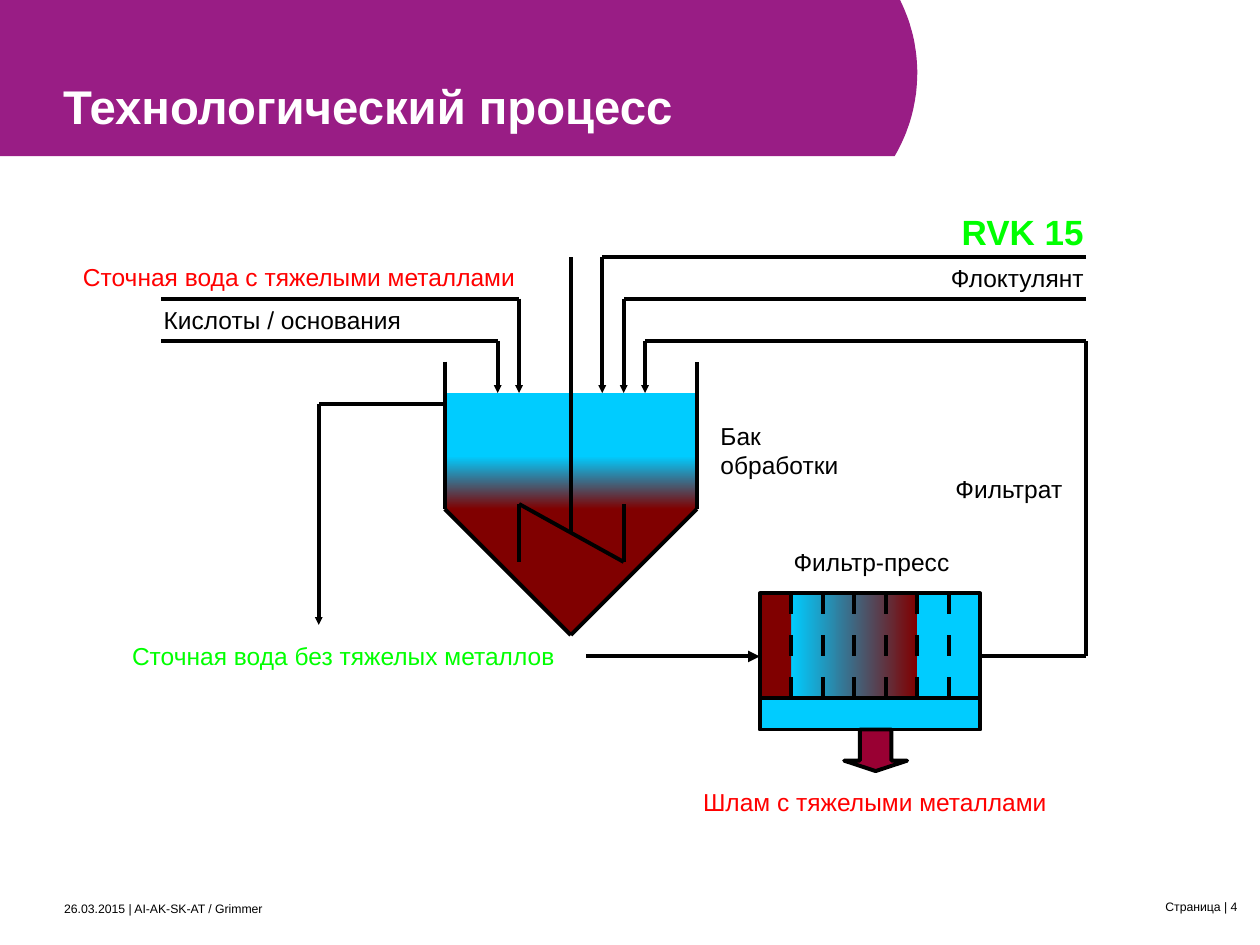
"""Build the process flow slide for heavy-metal wastewater treatment."""
from math import sqrt

from lxml.etree import SubElement
from pptx import Presentation
from pptx.dml.color import RGBColor
from pptx.enum.shapes import MSO_CONNECTOR, MSO_SHAPE
from pptx.enum.text import MSO_ANCHOR, PP_ALIGN
from pptx.oxml.ns import qn
from pptx.util import Inches, Pt

PURPLE = RGBColor(0x99, 0x1D, 0x85)
BLACK = RGBColor(0, 0, 0)
WHITE = RGBColor(0xFF, 0xFF, 0xFF)
RED = RGBColor(0xFF, 0, 0)
GREEN = RGBColor(0, 0xFF, 0)
WATER = RGBColor(0, 0xCC, 0xFF)
SLUDGE = RGBColor(0x80, 0, 0)
CAKE = RGBColor(0x99, 0, 0x33)
LEFT, CENTER, RIGHT = PP_ALIGN.LEFT, PP_ALIGN.CENTER, PP_ALIGN.RIGHT

PIPES = [
    ([(1.28, 2.37), (4.12, 2.37), (4.12, 3.12)], "sm"),
    ([(1.28, 2.71), (3.95, 2.71), (3.95, 3.12)], "sm"),
    ([(8.62, 2.04), (4.78, 2.04), (4.78, 3.12)], "sm"),
    ([(8.62, 2.37), (4.95, 2.37), (4.95, 3.12)], "sm"),
    ([(7.78, 5.21), (8.62, 5.21), (8.62, 2.71), (5.12, 2.71), (5.12, 3.12)], "sm"),
    ([(3.53, 3.21), (2.53, 3.21), (2.53, 4.96)], "sm"),
    ([(4.53, 5.04), (4.53, 5.21), (6.03, 5.21)], "med"),
]
TANK_LINES = [
    [(3.53, 2.87), (3.53, 4.04), (4.53, 5.04), (5.53, 4.04), (5.53, 2.87)],
    [(4.53, 4.23), (4.53, 2.04)],
    [(4.12, 4.46), (4.12, 4), (4.95, 4.46), (4.95, 4)],
]
LABELS = [
    ("Сточная вода с тяжелыми металлами", (0.56, 2.03, 3.78, 0.34), RED, LEFT, None),
    ("Кислоты / основания", (1.2, 2.37, 2.35, 0.34), BLACK, LEFT, None),
    ("Флоктулянт", (7.37, 2.04, 1.33, 0.33), BLACK, RIGHT, None),
    ("Сточная вода без тяжелых металлов", (0.95, 5.04, 3.7, 0.34), GREEN, LEFT, WHITE),
    ("Фильтрат", (7.2, 3.71, 1.33, 0.33), BLACK, RIGHT, None),
    ("Фильтр-пресс", (6.2, 4.29, 1.99, 0.34), BLACK, LEFT, None),
    ("Бак обработки", (5.62, 3.29, 1.33, 0.57), BLACK, LEFT, None),
    ("Шлам с тяжелыми металлами", (5.36, 6.2, 3.17, 0.33), RED, CENTER, WHITE),
]
FOOTERS = [
    ("26.03.2015 | AI-AK-SK-AT / Grimmer", (0.51, 7.15, 4.96, 0.12)),
    ("Страница | 4", (9.25, 7.14, 0.63, 0.12)),
]
PRESS_X, PRESS_Y, PRESS_W, PRESS_H = 6.03, 4.71, 1.75, 0.83
PLATE_GAP, DASH = 0.25, PRESS_H / 5


def add_text(s, text, box, color, size=14, bold=False, align=LEFT, fill=None, inset=True):
    sp = s.shapes.add_textbox(*map(Inches, box))
    if fill is not None:
        sp.fill.solid()
        sp.fill.fore_color.rgb = fill
    tf = sp.text_frame
    tf.word_wrap = True
    if not inset:
        tf.margin_left = tf.margin_right = tf.margin_top = tf.margin_bottom = 0
    p = tf.paragraphs[0]
    p.alignment = align
    r = p.add_run()
    r.text = text
    r.font.name = "Arial"
    r.font.size = Pt(size)
    r.font.bold = bold
    r.font.color.rgb = color
    return tf


def add_block(s, kind, box, fill=None, outlined=False):
    sp = s.shapes.add_shape(kind, *map(Inches, box))
    sp.shadow.inherit = False
    if fill is None:
        sp.fill.background()
    elif isinstance(fill, RGBColor):
        sp.fill.solid()
        sp.fill.fore_color.rgb = fill
    else:
        *colors, angle = fill
        sp.fill.gradient()
        sp.fill.gradient_angle = angle
        for stop, color in zip(sp.fill.gradient_stops, colors):
            stop.color.rgb = color
    if outlined:
        sp.line.color.rgb = BLACK
        sp.line.width = Pt(2.25)
    else:
        sp.line.fill.background()
    return sp


def add_route(s, points, head=None):
    for start, end in zip(points, points[1:]):
        line = s.shapes.add_connector(MSO_CONNECTOR.STRAIGHT, *map(Inches, start + end))
        line.line.color.rgb = BLACK
        line.line.width = Pt(2.25)
        SubElement(line._element.spPr, qn("a:effectLst"))
    if head:
        SubElement(line.line._get_or_add_ln(), qn("a:tailEnd"), type="triangle", w=head, len=head)


def add_banner(s, height=1.24, center_x=5.98, center_y=0.58, radius=1.3, steps=40):
    ys = [height * i / steps for i in range(steps + 1)]
    arc = [(center_x + sqrt(radius**2 - (y - center_y) ** 2), y) for y in ys]
    builder = s.shapes.build_freeform(0, 0, scale=Inches(1) / 1000)
    builder.add_line_segments([(x * 1000, y * 1000) for x, y in arc + [(0, height)]])
    sp = builder.convert_to_shape()
    sp.shadow.inherit = False
    sp.fill.solid()
    sp.fill.fore_color.rgb = PURPLE
    sp.line.fill.background()


def add_press(s):
    x, y, w, h = PRESS_X, PRESS_Y, PRESS_W, PRESS_H
    rect = MSO_SHAPE.RECTANGLE
    add_block(s, rect, (x + PLATE_GAP, y, 1, h), (WATER, SLUDGE, 0))
    add_block(s, rect, (x + 1.25, y, 0.5, h), WATER)
    add_block(s, rect, (x, y, PLATE_GAP, h), SLUDGE)
    add_block(s, rect, (x, y + h, w, 0.25), WATER)
    add_block(s, rect, (x, y, w, h + 0.25), outlined=True)
    add_route(s, [(x, y + h), (x + w, y + h)])
    for plate in range(1, 7):
        plate_x = x + plate * PLATE_GAP
        for dash in (0, 2, 4):
            top = y + dash * DASH
            add_route(s, [(plate_x, top), (plate_x, top + DASH)])
    arrow = add_block(s, MSO_SHAPE.DOWN_ARROW, (6.7, 5.79, 0.5, 0.33), CAKE, outlined=True)
    arrow.adjustments[0], arrow.adjustments[1] = 0.5, 0.25


def add_tank(s):
    cone = add_block(s, MSO_SHAPE.ISOSCELES_TRIANGLE, (3.53, 4.04, 2, 1), SLUDGE)
    cone.rotation = 180
    add_block(s, MSO_SHAPE.RECTANGLE, (3.53, 3.12, 2, 0.5), WATER)
    add_block(s, MSO_SHAPE.RECTANGLE, (3.53, 3.62, 2, 0.42), (WATER, SLUDGE, 270))
    for points in TANK_LINES:
        add_route(s, points)


def main():
    prs = Presentation()
    prs.slide_width, prs.slide_height = Inches(10), Inches(7.5)
    s = prs.slides.add_slide(prs.slide_layouts[6])
    add_banner(s)
    for points, head in PIPES:
        add_route(s, points, head)
    add_press(s)
    for text, box, color, align, fill in LABELS:
        add_text(s, text, box, color, align=align, fill=fill)
    add_text(s, "RVK 15", (7.2, 1.62, 1.5, 0.43), GREEN, 20, True, RIGHT)
    add_tank(s)
    title = add_text(s, "Технологический процесс", (0.5, 0.12, 6.55, 0.94), WHITE, 27, True, inset=False)
    title.vertical_anchor = MSO_ANCHOR.BOTTOM
    for text, box in FOOTERS:
        add_text(s, text, box, BLACK, 7, inset=False)
    prs.save("out.pptx")


if __name__ == "__main__":
    main()
